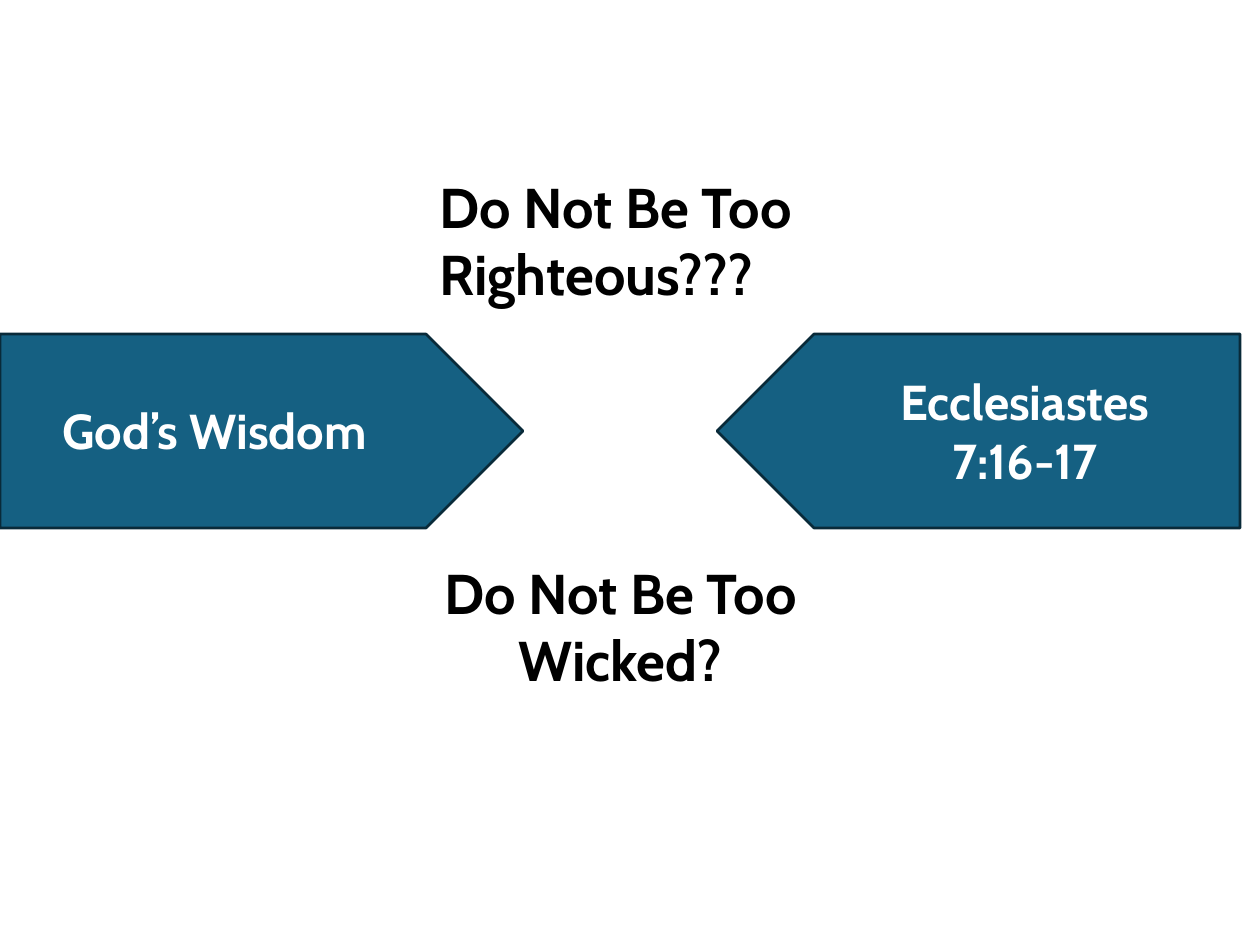
from pptx import Presentation
from pptx import util as u
from pptx.dml.color import RGBColor
from pptx.enum import shapes, text

PX = 914400 // 126
BLUE = RGBColor(0x15, 0x60, 0x82)
NAVY = RGBColor(0x09, 0x2A, 0x39)
WHITE = RGBColor(0xFF, 0xFF, 0xFF)
BLACK = RGBColor(0, 0, 0)
LEFT, CENTER = text.PP_ALIGN.LEFT, text.PP_ALIGN.CENTER

deck = Presentation()
deck.slide_width, deck.slide_height = u.Inches(10), u.Inches(7.5)
slide = deck.slides.add_slide(deck.slide_layouts[6])

for left, rotation in ((0, 0), (717, 180)):
    arrow = slide.shapes.add_shape(
        shapes.MSO_SHAPE.PENTAGON, left * PX, 334 * PX, 523 * PX, 194 * PX)
    arrow.rotation = rotation
    arrow.shadow.inherit = False
    arrow.fill.solid()
    arrow.fill.fore_color.rgb = BLUE
    arrow.line.color.rgb = NAVY
    arrow.line.width = u.Pt(1.5)

captions = (
    ("God’s Wisdom", (50, 394, 364, 72), 28, WHITE, LEFT),
    ("Ecclesiastes 7:16-17", (839, 365, 372, 131), 28, WHITE, CENTER),
    ("Do Not Be Too Righteous???", (427, 166, 406, 149), 32, BLACK, LEFT),
    ("Do Not Be Too Wicked?", (408, 552, 425, 149), 32, BLACK, CENTER),
)
for wording, place, size, color, alignment in captions:
    caption = slide.shapes.add_textbox(*(length * PX for length in place))
    frame = caption.text_frame
    frame.word_wrap = True
    frame.auto_size = text.MSO_AUTO_SIZE.SHAPE_TO_FIT_TEXT
    line = frame.paragraphs[0]
    line.text = wording
    line.alignment = alignment
    line.font.name = "Cabin"
    line.font.size = u.Pt(size)
    line.font.bold = True
    line.font.color.rgb = color

deck.save("out.pptx")
